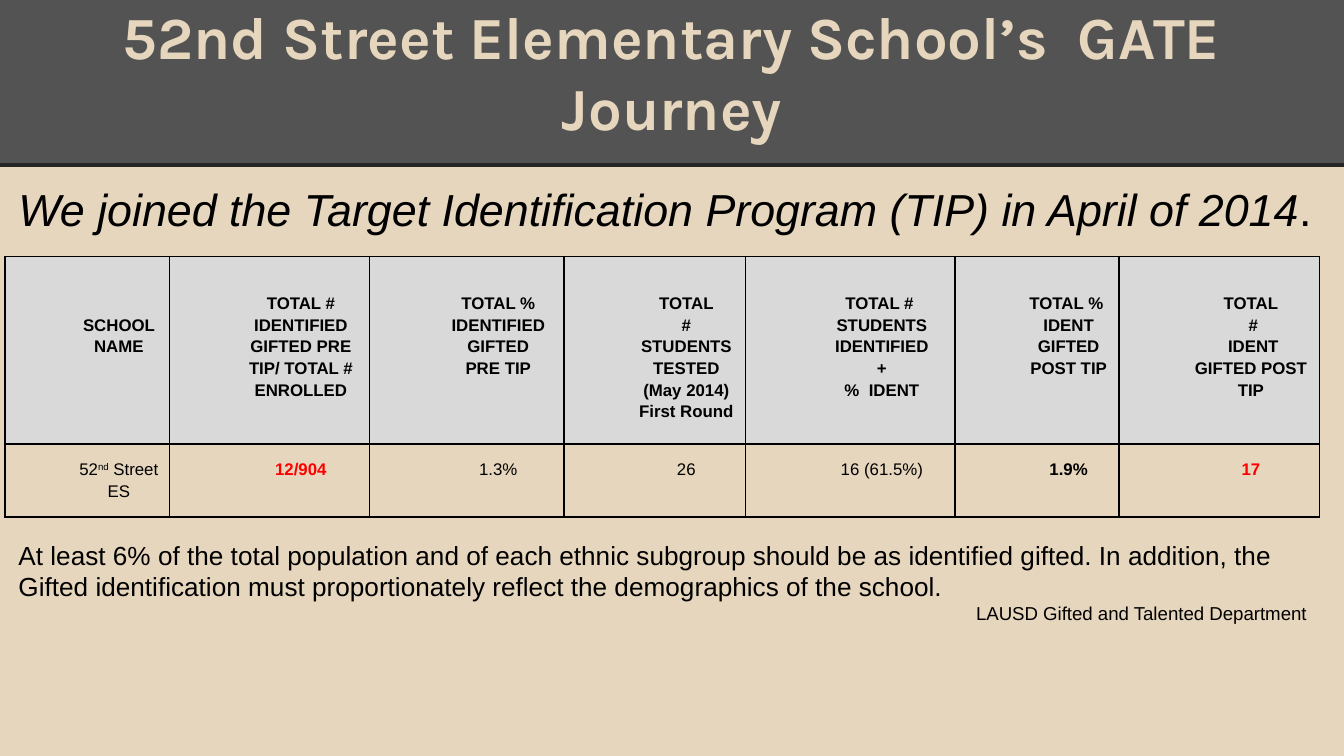
from lxml import etree
from pptx import Presentation
from pptx import util as u
from pptx.dml.color import RGBColor
from pptx.enum import shapes, text
from pptx.oxml import ns

CENTER, RIGHT = text.PP_ALIGN.CENTER, text.PP_ALIGN.RIGHT
SAND, SLATE, INK = "E6D6BD", "535353", "262626"
BLACK, RED, GREY = "000000", "FF0000", "D9D9D9"


def colour(hex_code):
    return RGBColor.from_string(hex_code)


class Deck:
    font = "Arial"
    inset = u.Cm(0.25)
    cell_inset = u.Cm(0.18)
    cell_indent = u.Cm(1.19)
    cell_line = u.Cm(0.41)

    def __init__(self, width, height):
        self.presentation = Presentation()
        self.presentation.slide_width = u.Cm(width)
        self.presentation.slide_height = u.Cm(height)
        self.slide = self.presentation.slides.add_slide(self.presentation.slide_layouts[6])

    def background(self, fill):
        self.slide.background.fill.solid()
        self.slide.background.fill.fore_color.rgb = colour(fill)

    def band(self, place, fill):
        band = self.slide.shapes.add_shape(shapes.MSO_SHAPE.RECTANGLE, *map(u.Cm, place))
        band.shadow.inherit = False
        band.fill.solid()
        band.fill.fore_color.rgb = colour(fill)
        band.line.fill.background()

    def rule(self, start, end, ink, weight):
        rule = self.slide.shapes.add_connector(
            shapes.MSO_CONNECTOR.STRAIGHT, *map(u.Cm, start + end))
        rule.line.color.rgb = colour(ink)
        rule.line.width = u.Pt(weight)
        etree.SubElement(rule._element.spPr, ns.qn("a:effectLst"))

    def style(self, run, size, ink=BLACK, bold=False, italic=False, font=None):
        run.font.name = font or self.font
        run.font.size = u.Pt(size)
        run.font.bold = bold
        run.font.italic = italic
        run.font.color.rgb = colour(ink)

    def text_box(self, place, lines, anchor=text.MSO_ANCHOR.TOP):
        frame = self.slide.shapes.add_textbox(*map(u.Cm, place)).text_frame
        frame.word_wrap = True
        frame.vertical_anchor = anchor
        frame.margin_left = frame.margin_right = self.inset
        frame.margin_top = frame.margin_bottom = self.inset
        frame.text = "\n".join(line for line, _, _ in lines)
        for paragraph, (_, align, looks) in zip(frame.paragraphs, lines):
            paragraph.alignment = align
            self.style(paragraph.runs[0], **looks)
        return frame

    def borders(self, cell):
        properties = cell._tc.get_or_add_tcPr()
        for side in ("lnL", "lnR", "lnT", "lnB"):
            edge = etree.SubElement(properties, ns.qn("a:" + side), w=str(u.Pt(1)))
            fill = etree.SubElement(edge, ns.qn("a:solidFill"))
            etree.SubElement(fill, ns.qn("a:srgbClr"), val=BLACK)

    def cell(self, cell, words, fill=None, skipped=0, **looks):
        cell.margin_left = cell.margin_right = self.cell_inset
        cell.margin_top = self.inset + skipped * self.cell_line
        cell.margin_bottom = self.inset
        self.borders(cell)
        if fill:
            cell.fill.solid()
            cell.fill.fore_color.rgb = colour(fill)
        else:
            cell.fill.background()
        cell.text_frame.text = words
        for paragraph in cell.text_frame.paragraphs:
            paragraph.alignment = CENTER
            paragraph.line_spacing = 1.15
            paragraph._p.get_or_add_pPr().set("marL", str(self.cell_indent))
            for run in paragraph.runs:
                self.style(run, 9, **looks)

    def superscript(self, cell, parts, raised):
        paragraph = cell.text_frame.paragraphs[0]
        paragraph.text = ""
        for part in parts:
            run = paragraph.add_run()
            run.text = part
            self.style(run, 9)
            if part == raised:
                run._r.get_or_add_rPr().set("baseline", "30000")

    def table(self, place, widths, heights):
        table = self.slide.shapes.add_table(
            len(heights), len(widths), *map(u.Cm, place)).table
        table.first_row = table.horz_banding = False
        for column, width in zip(table.columns, widths):
            column.width = u.Cm(width)
        for row, height in zip(table.rows, heights):
            row.height = u.Cm(height)
        return table


HEADINGS = [
    "SCHOOL NAME",
    "TOTAL # IDENTIFIED GIFTED PRE TIP/ TOTAL # ENROLLED",
    "TOTAL % IDENTIFIED GIFTED\nPRE TIP",
    "TOTAL\n #  STUDENTS TESTED\n(May 2014)\nFirst Round",
    "TOTAL #  STUDENTS IDENTIFIED\n+\n%  IDENT",
    "TOTAL %  IDENT\nGIFTED POST TIP",
    "TOTAL\n #\n IDENT GIFTED POST TIP",
]
RESULTS = [
    ("52nd Street ES", {}),
    ("12/904", {"ink": RED, "bold": True}),
    ("1.3%", {}),
    ("26", {}),
    ("16 (61.5%)", {}),
    ("1.9%", {"bold": True}),
    ("17", {"ink": RED, "bold": True}),
]


def main():
    deck = Deck(25.4, 14.29)
    deck.background(SAND)
    deck.band((0, 0, 25.4, 3.12), SLATE)
    deck.rule((0, 3.12), (25.4, 3.12), INK, 2.25)

    title = {"size": 32, "ink": SAND, "bold": True, "font": "Karla"}
    deck.text_box(
        (0.1, 0, 25.2, 2.95),
        [("52nd Street Elementary School’s  GATE Journey", CENTER, title)],
        text.MSO_ANCHOR.BOTTOM)

    journey = deck.table((0.1, 4.85, 24.84, 4.7),
                         (3.1, 3.78, 3.68, 3.43, 3.96, 3.1, 3.79), (3.36, 1.33))
    for index, heading in enumerate(HEADINGS):
        skipped = 2 if index == 0 else 1
        deck.cell(journey.cell(0, index), heading, GREY, skipped, bold=True)
    for index, (result, looks) in enumerate(RESULTS):
        deck.cell(journey.cell(1, index), result, **looks)
    deck.superscript(journey.cell(1, 0), ("52", "nd", " Street ES"), "nd")

    goal = ("At least 6% of the total population and of each ethnic subgroup should be "
            "as identified gifted. In addition, the Gifted identification must "
            "proportionately reflect the demographics of the school.")
    deck.text_box(
        (0.1, 10.06, 24.84, 1.88),
        [(goal, None, {"size": 14}),
         ("LAUSD Gifted and Talented Department", RIGHT, {"size": 10})],
        text.MSO_ANCHOR.MIDDLE)

    joined = deck.text_box(
        (0.1, 3.18, 25.2, 1.6),
        [("We joined the Target Identification Program (TIP) in April of 2014",
          None, {"size": 24, "italic": True})])
    period = joined.paragraphs[0].add_run()
    period.text = "."
    deck.style(period, 24)

    deck.presentation.save("out.pptx")


if __name__ == "__main__":
    main()
